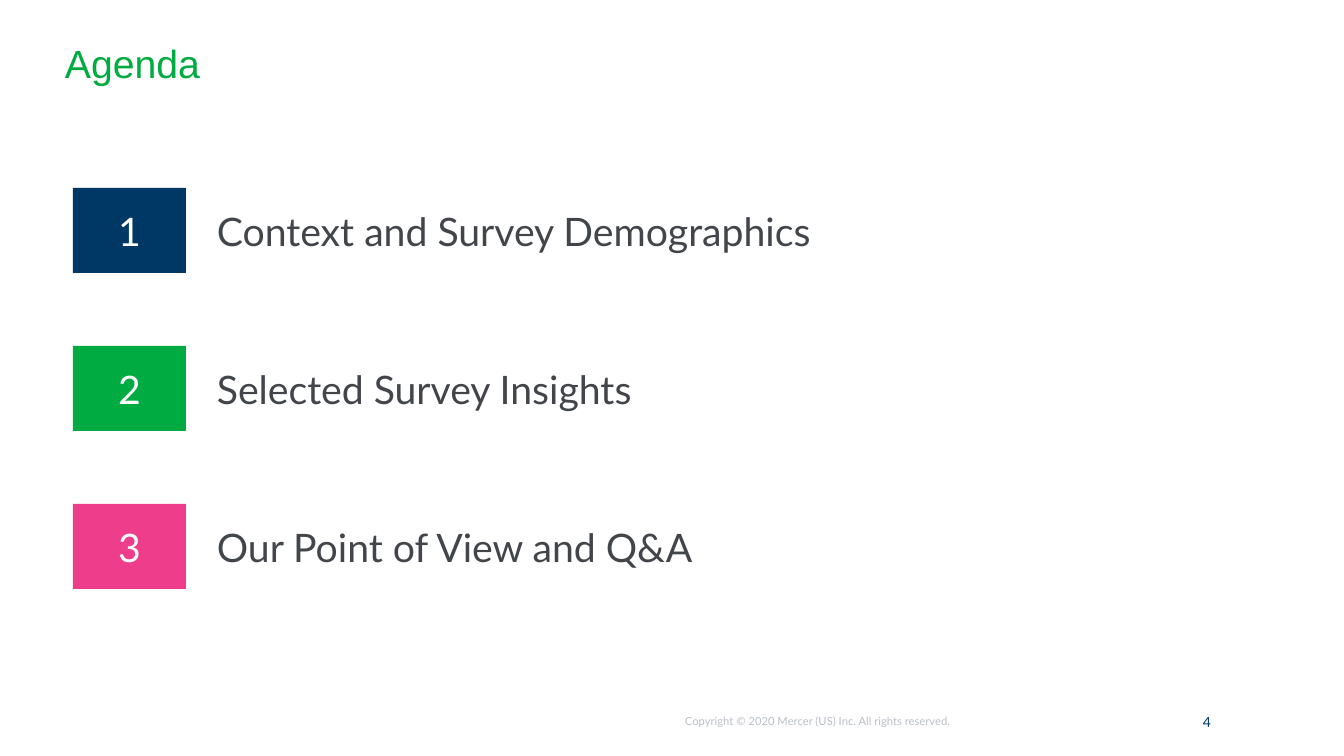
import pptx
import pptx.dml.color
import pptx.enum.shapes
import pptx.enum.text
import pptx.util

RGBColor = pptx.dml.color.RGBColor
NAVY = RGBColor(0x00, 0x38, 0x65)
GREEN = RGBColor(0x00, 0xAC, 0x41)
PINK = RGBColor(0xEE, 0x3D, 0x8B)
WHITE = RGBColor(0xFF, 0xFF, 0xFF)
DARK_GRAY = RGBColor(0x42, 0x46, 0x4B)
LIGHT_GRAY = RGBColor(0xB9, 0xBF, 0xC7)

SLIDE_WIDTH, SLIDE_HEIGHT = 1344, 756
EMU_PER_PX = 12192000 / SLIDE_WIDTH

AGENDA = [
    ("Context and Survey Demographics", NAVY),
    ("Selected Survey Insights", GREEN),
    ("Our Point of View and Q&A", PINK),
]
FIRST_ROW_TOP, ROW_PITCH, ROW_HEIGHT = 188, 158, 85
BADGE_LEFT, BADGE_WIDTH = 73, 113
LABEL_LEFT, LABEL_WIDTH = 207, 941
FOOTER_TOP, FOOTER_HEIGHT = 714, 30


def px(length):
    return pptx.util.Emu(round(length * EMU_PER_PX))


class SlideBuilder:
    body_font = "Lato"
    title_font = "Arial"
    heading_size = 28

    def __init__(self, slide):
        self.slide = slide

    def set_text(self, shape, text, size, color, font=body_font):
        """Fill a shape with one styled paragraph and return that paragraph."""
        shape.text_frame.text = text
        paragraph = shape.text_frame.paragraphs[0]
        run_font = paragraph.runs[0].font
        run_font.name = font
        run_font.size = pptx.util.Pt(size)
        run_font.color.rgb = color
        return paragraph

    def text_box(self, left, top, width, height):
        box = self.slide.shapes.add_textbox(px(left), px(top), px(width), px(height))
        box.text_frame.word_wrap = True
        return box

    def flush_text(self, bounds, text, size, color, font=body_font):
        """Add a text box without inner margins and return its paragraph."""
        box = self.text_box(*bounds)
        frame = box.text_frame
        frame.margin_left = frame.margin_right = 0
        frame.margin_top = frame.margin_bottom = 0
        return self.set_text(box, text, size, color, font)

    def title(self, text):
        paragraph = self.flush_text(
            (65, 48, 1213, 105), text, self.heading_size, GREEN, self.title_font)
        paragraph.line_spacing = 0.8

    def badge(self, top, text, color):
        badge = self.slide.shapes.add_shape(
            pptx.enum.shapes.MSO_SHAPE.RECTANGLE,
            px(BADGE_LEFT), px(top), px(BADGE_WIDTH), px(ROW_HEIGHT))
        badge.shadow.inherit = False
        badge.fill.solid()
        badge.fill.fore_color.rgb = color
        badge.line.fill.background()
        badge.text_frame.vertical_anchor = pptx.enum.text.MSO_ANCHOR.MIDDLE
        paragraph = self.set_text(badge, text, self.heading_size, WHITE)
        paragraph.alignment = pptx.enum.text.PP_ALIGN.CENTER

    def label(self, top, text):
        box = self.text_box(LABEL_LEFT, top, LABEL_WIDTH, ROW_HEIGHT)
        box.text_frame.vertical_anchor = pptx.enum.text.MSO_ANCHOR.MIDDLE
        self.set_text(box, text, self.heading_size, DARK_GRAY)

    def footer(self, left, width, text, size, color):
        self.flush_text((left, FOOTER_TOP, width, FOOTER_HEIGHT), text, size, color)


def main():
    presentation = pptx.Presentation()
    presentation.slide_width = px(SLIDE_WIDTH)
    presentation.slide_height = px(SLIDE_HEIGHT)
    blank_layout = presentation.slide_layouts[6]
    builder = SlideBuilder(presentation.slides.add_slide(blank_layout))

    builder.title("Agenda")
    for index, (topic, color) in enumerate(AGENDA):
        top = FIRST_ROW_TOP + index * ROW_PITCH
        builder.badge(top, str(index + 1), color)
        builder.label(top, topic)
    builder.footer(
        685, 462, "Copyright © 2020 Mercer (US) Inc. All rights reserved.", 8, LIGHT_GRAY)
    builder.footer(1203, 75, "4", 10, NAVY)

    presentation.save("out.pptx")


if __name__ == "__main__":
    main()
